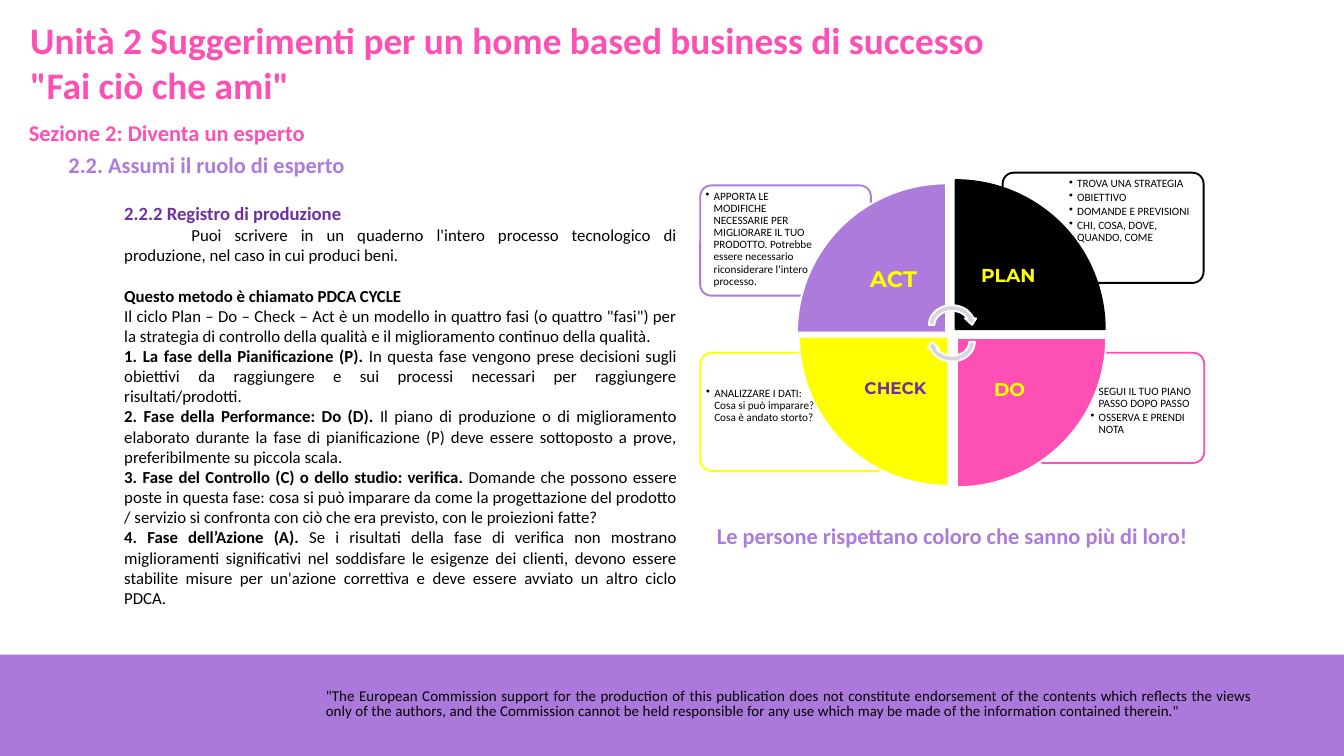
from dataclasses import dataclass

from lxml.etree import SubElement
from pptx import Presentation
from pptx.dml.color import RGBColor
from pptx.enum.shapes import MSO_SHAPE
from pptx.enum.text import MSO_ANCHOR, MSO_AUTO_SIZE, PP_ALIGN
from pptx.oxml.ns import qn
from pptx.util import Inches, Pt


@dataclass(frozen=True)
class Theme:
    pink: str = "FD4FB4"
    lavender: str = "AC7BDC"
    band: str = "AB79DB"
    purple: str = "7030A0"
    yellow: str = "FFFF00"
    black: str = "000000"
    white: str = "FFFFFF"
    arrow: str = "D8D3E0"
    text_font: str = "Calibri"
    label_font: str = "Montserrat"
    title: int = 40
    heading: int = 24
    subheading: int = 20
    body: int = 18
    footer: int = 16
    note: int = 12


THEME = Theme()

PHASES = [
    ("1. La fase della Pianificazione (P).",
     " In questa fase vengono prese decisioni sugli obiettivi da raggiungere e sui processi "
     "necessari per raggiungere risultati/prodotti."),
    ("2. Fase della Performance: Do (D).",
     " Il piano di produzione o di miglioramento elaborato durante la fase di pianificazione (P) "
     "deve essere sottoposto a prove, preferibilmente su piccola scala."),
    ("3. Fase del Controllo (C) o dello studio: verifica.",
     " Domande che possono essere poste in questa fase: cosa si può imparare da come la "
     "progettazione del prodotto / servizio si confronta con ciò che era previsto, con le "
     "proiezioni fatte?"),
    ("4. Fase dell’Azione (A).",
     " Se i risultati della fase di verifica non mostrano miglioramenti significativi nel "
     "soddisfare le esigenze dei clienti, devono essere stabilite misure per un'azione "
     "correttiva e deve essere avviato un altro ciclo PDCA."),
]

# Card place, line colour, note place, bullets
CARDS = [
    ((15.38, 5.25, 2.54, 1.64), THEME.pink, (16.18, 5.69, 1.7, 1.16),
     ["SEGUI IL TUO PIANO PASSO DOPO PASSO", "OSSERVA E PRENDI NOTA"]),
    ((10.42, 5.25, 2.79, 1.76), THEME.yellow, (10.46, 5.72, 1.87, 1.24),
     ["ANALIZZARE I DATI: Cosa si può imparare? Cosa è andato storto?"]),
    ((14.92, 2.57, 2.99, 1.64), THEME.black, (15.86, 2.6, 2.02, 1.16),
     ["TROVA UNA STRATEGIA", "OBIETTIVO", "DOMANDE E PREVISIONI",
      "CHI, COSA, DOVE, QUANDO, COME"]),
    ((10.42, 2.76, 2.54, 1.64), THEME.lavender, (10.45, 2.79, 1.7, 1.16),
     ["APPORTA LE MODIFICHE NECESSARIE PER MIGLIORARE IL TUO PRODOTTO. Potrebbe essere "
      "necessario riconsiderare l'intero processo."]),
]

# Label, left, top, rotation, fill, line, label size, label colour, label inset
WEDGES = [
    ("ACT", 11.86, 2.73, 0, THEME.lavender, THEME.white, 24, THEME.yellow, 0.19),
    ("PLAN", 14.22, 2.68, 90, THEME.black, THEME.black, 20, THEME.yellow, 0.16),
    ("DO", 14.24, 5.03, 180, THEME.pink, THEME.white, 20, THEME.yellow, 0.16),
    ("CHECK", 11.89, 5.01, 270, THEME.yellow, THEME.white, 18, THEME.purple, 0.14),
]
WEDGE_SIZE, LABEL_SIZE = 2.22, 1.57


def add_frame(page, place, anchor=MSO_ANCHOR.TOP, inset=None, grow=True):
    """Add a wrapping text box and return its text frame."""
    frame = page.shapes.add_textbox(*map(Inches, place)).text_frame
    frame.word_wrap = True
    frame.auto_size = MSO_AUTO_SIZE.SHAPE_TO_FIT_TEXT if grow else MSO_AUTO_SIZE.NONE
    frame.vertical_anchor = anchor
    if inset is not None:
        frame.margin_left = frame.margin_right = Inches(inset)
        frame.margin_top = frame.margin_bottom = Inches(inset if not grow else 0.05)
    return frame


def add_para(frame, align=PP_ALIGN.LEFT, before=None, after=None, spacing=None, indent=None):
    """Return the empty first paragraph, or a new one, with its layout set."""
    first = frame.paragraphs[0]
    para = frame.add_paragraph() if first.runs else first
    para.alignment = align
    if before is not None:
        para.space_before = Pt(before)
    if after is not None:
        para.space_after = Pt(after)
    if spacing is not None:
        para.line_spacing = spacing
    if indent is not None:
        para._p.get_or_add_pPr().set("indent", str(Inches(indent)))
    return para


def add_span(para, text, size=THEME.body, color=THEME.black, bold=False, font=THEME.text_font):
    span = para.add_run()
    span.text = text
    span.font.size = Pt(size)
    span.font.bold = bold
    span.font.name = font
    span.font.color.rgb = RGBColor.from_string(color)
    return span


def add_bullet(para, hanging=0.12):
    props = para._p.get_or_add_pPr()
    props.set("marL", str(Inches(hanging)))
    props.set("indent", str(-Inches(hanging)))
    SubElement(props, qn("a:buChar")).set("char", "•")


def add_box(page, kind, place, fill=None, line=None, rotation=0):
    box = page.shapes.add_shape(kind, *map(Inches, place))
    box.shadow.inherit = False
    box.rotation = rotation
    if fill:
        box.fill.solid()
        box.fill.fore_color.rgb = RGBColor.from_string(fill)
    else:
        box.fill.background()
    if line:
        box.line.color.rgb = RGBColor.from_string(line)
        box.line.width = Pt(2)
    else:
        box.line.fill.background()
    return box


def add_heading(page, place, *lines, color=THEME.lavender, size=THEME.heading,
                align=PP_ALIGN.LEFT, **layout):
    frame = add_frame(page, place, **layout)
    for line in lines:
        add_span(add_para(frame, align), line, size=size, color=color, bold=True)


def add_footer(page):
    add_box(page, MSO_SHAPE.RECTANGLE, (0, 9.74, 20, 1.51), fill=THEME.band)
    para = add_para(add_frame(page, (4.75, 10.21, 14, 0.55)), PP_ALIGN.JUSTIFY, spacing=Pt(16.1))
    span = add_span(
        para,
        '"The European Commission support for the production of this publication does not '
        'constitute endorsement of the contents which reflects the views only of the authors, '
        'and the Commission cannot be held responsible for any use which may be made of the '
        'information contained therein."',
        size=THEME.footer)
    span.font._element.set("spc", "10")


def add_body(page):
    frame = add_frame(page, (1.75, 2.91, 8.42, 6.23), MSO_ANCHOR.MIDDLE)
    add_span(add_para(frame), "2.2.2 Registro di produzione",
             size=THEME.subheading, color=THEME.purple, bold=True)
    add_span(add_para(frame, PP_ALIGN.JUSTIFY, indent=1),
             "Puoi scrivere in un quaderno l'intero processo tecnologico di produzione, "
             "nel caso in cui produci beni.")
    add_span(add_para(frame, PP_ALIGN.JUSTIFY, before=22, indent=0),
             "Questo metodo è chiamato PDCA CYCLE", bold=True)
    add_span(add_para(frame, PP_ALIGN.JUSTIFY),
             'Il ciclo Plan – Do – Check – Act è un modello in quattro fasi (o quattro "fasi") '
             "per la strategia di controllo della qualità e il miglioramento continuo della "
             "qualità.")
    for name, description in PHASES:
        para = add_para(frame, PP_ALIGN.JUSTIFY)
        add_span(para, name, bold=True)
        add_span(para, description)


def add_cycle(page):
    # Cards with notes
    for place, color, note_place, notes in CARDS:
        card = add_box(page, MSO_SHAPE.ROUNDED_RECTANGLE, place, fill=THEME.white, line=color)
        card.adjustments[0] = 0.1
        frame = add_frame(page, note_place, inset=0.05, grow=False)
        for note in notes:
            para = add_para(frame, after=1.8, spacing=0.9)
            add_bullet(para)
            add_span(para, note, size=THEME.note)

    # Wedges, each label set against the centre of the circle
    shift = WEDGE_SIZE - LABEL_SIZE
    for label, left, top, rotation, fill, line, size, color, inset in WEDGES:
        add_box(page, MSO_SHAPE.PIE_WEDGE, (left, top, WEDGE_SIZE, WEDGE_SIZE),
                fill, line, rotation)
        label_left = left + (shift if rotation in (0, 270) else 0)
        label_top = top + (shift if rotation in (0, 90) else 0)
        frame = add_frame(page, (label_left, label_top, LABEL_SIZE, LABEL_SIZE),
                          MSO_ANCHOR.MIDDLE, inset, grow=False)
        add_span(add_para(frame, PP_ALIGN.CENTER, spacing=0.9), label,
                 size=size, color=color, bold=True, font=THEME.label_font)

    # Turning arrows
    for top, rotation in ((4.5, 0), (4.75, 180)):
        add_box(page, MSO_SHAPE.CIRCULAR_ARROW, (13.78, top, 0.77, 0.67),
                THEME.arrow, THEME.white, rotation)


def main():
    deck = Presentation()
    deck.slide_width, deck.slide_height = Inches(20), Inches(11.25)
    page = deck.slides.add_slide(deck.slide_layouts[6])

    add_footer(page)
    add_body(page)
    add_heading(page, (0.33, 0.21, 16.67, 1.45),
                "Unità 2 Suggerimenti per un home based business di successo",
                '"Fai ciò che ami"', color=THEME.pink, size=THEME.title, inset=0.12)
    add_heading(page, (0.33, 1.72, 10.58, 0.5), "Sezione 2: Diventa un esperto", color=THEME.pink)
    add_heading(page, (0.92, 2.2, 14.83, 0.5), "2.2. Assumi il ruolo di esperto",
                align=PP_ALIGN.JUSTIFY, anchor=MSO_ANCHOR.MIDDLE)
    add_heading(page, (10.42, 7.72, 7.5, 0.5),
                "Le persone rispettano coloro che sanno più di loro!", align=PP_ALIGN.CENTER)
    add_cycle(page)

    deck.save("out.pptx")


if __name__ == "__main__":
    main()
